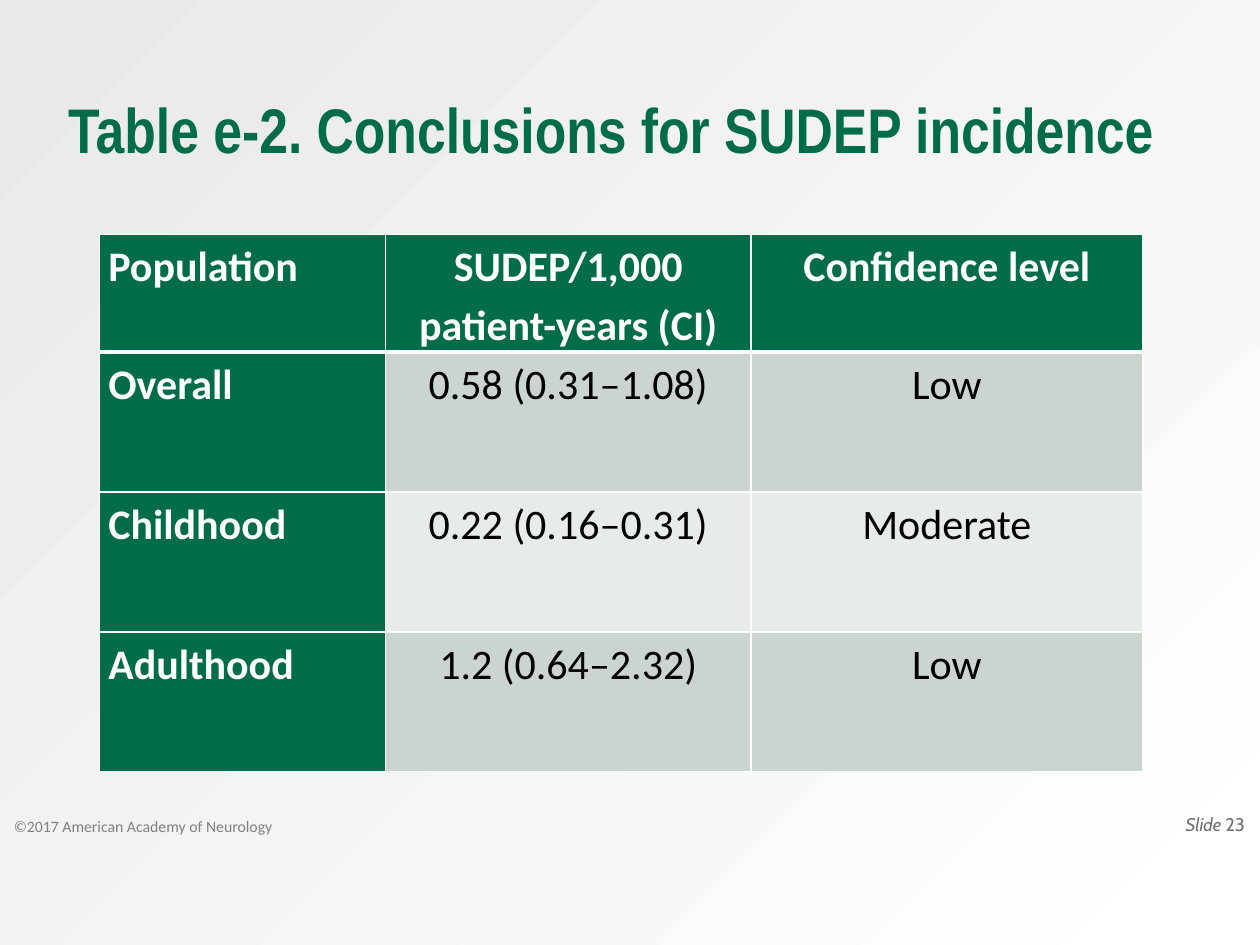
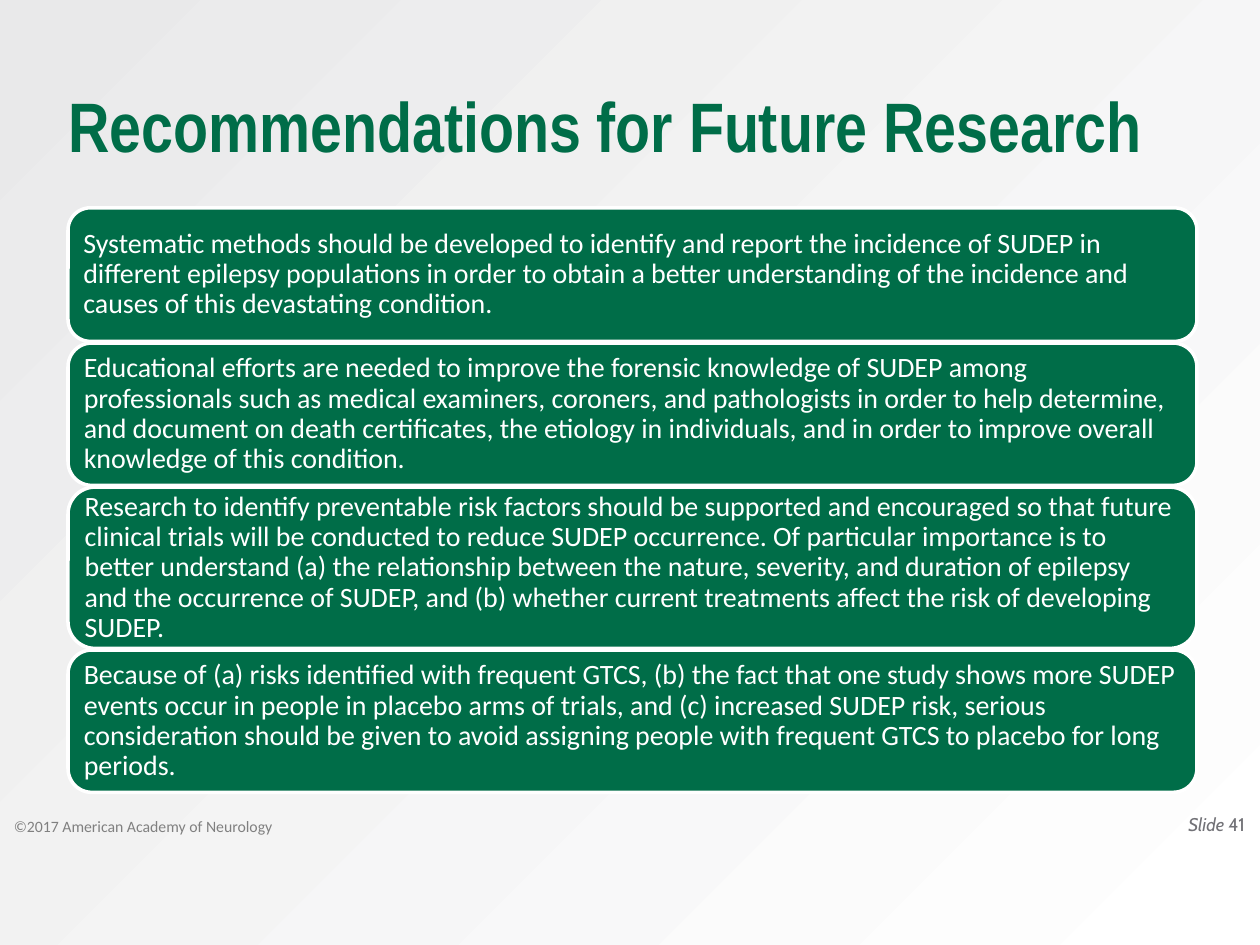
from dataclasses import dataclass

from pptx import Presentation
from pptx.dml.color import RGBColor
from pptx.enum.shapes import MSO_SHAPE
from pptx.enum.text import MSO_ANCHOR, MSO_AUTO_SIZE, PP_ALIGN
from pptx.oxml import parse_xml
from pptx.oxml.ns import nsdecls, qn
from pptx.util import Inches, Pt

GREEN = RGBColor(0x00, 0x6D, 0x48)
WHITE = RGBColor(0xFF, 0xFF, 0xFF)
BLACK = RGBColor(0x00, 0x00, 0x00)
MIST = RGBColor(0xE9, 0xE9, 0xEA)
GREY = RGBColor(0x80, 0x80, 0x80)
SLATE = RGBColor(0x72, 0x72, 0x77)
BANDS = (RGBColor(0xCC, 0xD4, 0xCF), RGBColor(0xE7, 0xEB, 0xE9))

BODY = "Calibri"
WIDTH, HEIGHT = Inches(10), Inches(7.5)
COLS, ROWS = 100, 75  # square grid units
UNIT = WIDTH // COLS
LEFT, SPAN = 5.4, 89.6  # content column, shared by title and cards


@dataclass(frozen=True)
class Area:
    left: float
    top: float
    width: float
    height: float

    def box(self) -> tuple[int, int, int, int]:
        """Give the area in EMU."""
        return tuple(round(n * UNIT) for n in
                     (self.left, self.top, self.width, self.height))


@dataclass(frozen=True)
class Style:
    size: float
    color: RGBColor
    font: str = BODY
    bold: bool = False
    italic: bool = False


@dataclass(frozen=True)
class Card:
    height: float
    text: str


TITLE = Area(LEFT, 3.7, SPAN, 9.8)
RIGHTS = Area(1.1, 56.5, 60, 10)
NUMBER = Area(76.5, 63.4, 23.3, 4)
TABLE = Area(7.9, 18.6, 82.8, 42.5)
TABLE_COLS = (22.7, 29, 31.1)
TABLE_ROWS = (9.2, 11.1, 11.1, 11.1)
CARD_TOP, CARD_GAP = 16.5, 0.13

DATA = (
    ("Population", "SUDEP/1,000 patient-years (CI)", "Confidence level"),
    ("Overall", "0.58 (0.31–1.08)", "Low"),
    ("Childhood", "0.22 (0.16–0.31)", "Moderate"),
    ("Adulthood", "1.2 (0.64–2.32)", "Low"),
)

CARDS = (
    Card(10.6, "Systematic methods should be developed to identify and report "
               "the incidence of SUDEP in different epilepsy populations in "
               "order to obtain a better understanding of the incidence and "
               "causes of this devastating condition."),
    Card(11.3, "Educational efforts are needed to improve the forensic "
               "knowledge of SUDEP among professionals such as medical "
               "examiners, coroners, and pathologists in order to help "
               "determine, and document on death certificates, the etiology "
               "in individuals, and in order to improve overall knowledge of "
               "this condition."),
    Card(12.8, "Research to identify preventable risk factors should be "
               "supported and encouraged so that future clinical trials will "
               "be conducted to reduce SUDEP occurrence. Of particular "
               "importance is to better understand (a) the relationship "
               "between the nature, severity, and duration of epilepsy and "
               "the occurrence of SUDEP, and (b) whether current treatments "
               "affect the risk of developing SUDEP."),
    Card(11.3, "Because of (a) risks identified with frequent GTCS, (b) the "
               "fact that one study shows more SUDEP events occur in people "
               "in placebo arms of trials, and (c) increased SUDEP risk, "
               "serious consideration should be given to avoid assigning "
               "people with frequent GTCS to placebo for long periods."),
)


def add_run(para, text: str, style: Style) -> None:
    run = para.add_run()
    run.text = text
    font = run.font
    font.name, font.size = style.font, Pt(style.size)
    font.bold, font.italic = style.bold, style.italic
    font.color.rgb = style.color


def set_frame(frame, anchor, side: float, edge: float):
    """Fix wrap, anchor and insets; give the first paragraph."""
    frame.word_wrap = True
    frame.auto_size = MSO_AUTO_SIZE.NONE
    frame.vertical_anchor = anchor
    frame.margin_left = frame.margin_right = Inches(side)
    frame.margin_top = frame.margin_bottom = Inches(edge)
    return frame.paragraphs[0]


def add_label(slide, area: Area, anchor, side: float, edge: float):
    return set_frame(slide.shapes.add_textbox(*area.box()).text_frame,
                     anchor, side, edge)


def paint_back(master) -> None:
    """Fade from white at the lower right corner to mist."""
    fill = master.background.fill
    fill.gradient()
    for stop, color in zip(fill.gradient_stops, (WHITE, MIST)):
        stop.color.rgb = color
    grad = master.element.find(".//" + qn("p:bg")).find(".//" + qn("a:gradFill"))
    grad.remove(grad.find(qn("a:lin")))
    grad.append(parse_xml(
        f'<a:path {nsdecls("a")} path="circle">'
        '<a:fillToRect l="100000" t="100000"/></a:path>'))


def add_page(deck, title: str, size: float, number: int):
    """Add a slide with its title, rights line and number."""
    slide = deck.slides.add_slide(deck.slide_layouts[6])
    para = add_label(slide, RIGHTS, MSO_ANCHOR.BOTTOM, 0, 0.02)
    add_run(para, "©2017 American Academy of Neurology", Style(9, GREY))
    para = add_label(slide, TITLE, MSO_ANCHOR.BOTTOM, 0, 0.02)
    para.line_spacing = 0.9
    add_run(para, title, Style(size, GREEN, "Arial Narrow", bold=True))
    para = add_label(slide, NUMBER, MSO_ANCHOR.MIDDLE, 0.1, 0.05)
    para.alignment = PP_ALIGN.RIGHT
    add_run(para, "Slide ", Style(10.5, SLATE, "Cabin", italic=True))
    add_run(para, str(number), Style(10.5, SLATE, "Cabin"))
    return slide


def set_edges(cell, top: float, base: float) -> None:
    props = cell._tc.get_or_add_tcPr()
    for side, width in zip("LRTB", (1, 1, top, base)):
        props.append(parse_xml(
            f'<a:ln{side} {nsdecls("a")} w="{Pt(width)}"><a:solidFill>'
            f'<a:srgbClr val="{WHITE}"/></a:solidFill></a:ln{side}>'))


def add_table(slide) -> None:
    table = slide.shapes.add_table(len(TABLE_ROWS), len(TABLE_COLS),
                                   *TABLE.box()).table
    for col, width in zip(table.columns, TABLE_COLS):
        col.width = round(width * UNIT)
    for row, height in zip(table.rows, TABLE_ROWS):
        row.height = round(height * UNIT)
    for i, line in enumerate(DATA):
        for j, text in enumerate(line):
            cell = table.cell(i, j)
            head = i == 0 or j == 0
            set_edges(cell, 3 if i == 1 else 1, 3 if i == 0 else 1)
            cell.fill.solid()
            cell.fill.fore_color.rgb = GREEN if head else BANDS[(i - 1) % 2]
            cell.margin_left = cell.margin_right = Inches(0.07)
            cell.margin_top = cell.margin_bottom = 0
            para = cell.text_frame.paragraphs[0]
            para.line_spacing = 1.15
            para.alignment = PP_ALIGN.CENTER if j else PP_ALIGN.LEFT
            add_run(para, text, Style(24, WHITE if head else BLACK, bold=head))


def add_cards(slide) -> None:
    top = CARD_TOP
    for card in CARDS:
        area = Area(LEFT, top, SPAN, card.height)
        shape = slide.shapes.add_shape(MSO_SHAPE.ROUNDED_RECTANGLE, *area.box())
        shape.shadow.inherit = False
        shape.fill.solid()
        shape.fill.fore_color.rgb = GREEN
        shape.line.color.rgb = WHITE
        shape.line.width = Pt(2)
        para = set_frame(shape.text_frame, MSO_ANCHOR.MIDDLE, 0.07, 0.07)
        para.alignment = PP_ALIGN.LEFT
        para.line_spacing = 0.9
        add_run(para, card.text, Style(16, WHITE))
        top += card.height + CARD_GAP


def main() -> None:
    deck = Presentation()
    deck.slide_width, deck.slide_height = WIDTH, HEIGHT
    paint_back(deck.slide_master)
    add_table(add_page(deck, "Table e-2. Conclusions for SUDEP incidence", 36, 23))
    add_cards(add_page(deck, "Recommendations for Future Research", 40, 41))
    deck.save("out.pptx")


if __name__ == "__main__":
    main()
